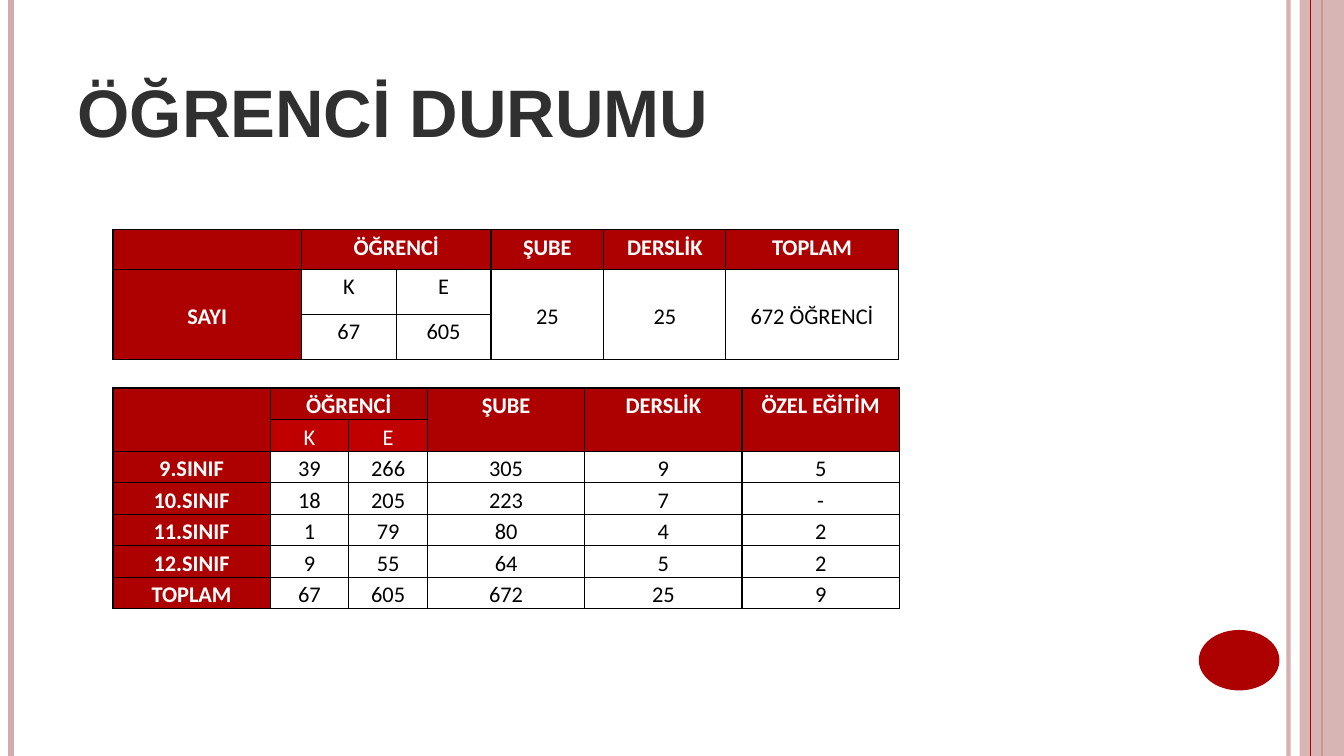
from lxml.etree import SubElement
from pptx import Presentation
from pptx.dml.color import RGBColor
from pptx.enum.shapes import MSO_CONNECTOR, MSO_SHAPE
from pptx.enum.text import MSO_ANCHOR, PP_ALIGN
from pptx.oxml.ns import qn
from pptx.util import Inches, Pt

COLORS = {"red": "AD0101", "bright": "C00000", "rose": "D3ABAB",
          "title": "303030", "black": "000000", "white": "FFFFFF"}
TITLE = "ÖĞRENCİ DURUMU"

# Spans are (first row, first column, last row, last column).
SUMMARY = {
    "at": (1.12, 2.28),
    "columns": [1.87, 0.94, 0.94, 1.12, 1.21, 1.71],
    "heights": [0.39, 0.45, 0.45],
    "rows": [["", "ÖĞRENCİ", "", "ŞUBE", "DERSLİK", "TOPLAM"],
             ["SAYI", "K", "E", "25", "25", "672 ÖĞRENCİ"],
             ["", "67", "605", "", "", ""]],
    "spans": [(0, 1, 0, 2)] + [(1, col, 2, col) for col in (0, 3, 4, 5)],
    "header_rows": 1,
    "subheads": [],
    "middle": [(1, col) for col in (0, 3, 4, 5)],
}
CLASSES = {
    "at": (1.12, 3.85),
    "columns": [1.56, 0.78, 0.78, 1.56, 1.56, 1.56],
    "heights": [0.31] * 7,
    "rows": [["", "ÖĞRENCİ", "", "ŞUBE", "DERSLİK", "ÖZEL EĞİTİM"],
             ["", "K", "E", "", "", ""],
             ["9.SINIF", "39", "266", "305", "9", "5"],
             ["10.SINIF", "18", "205", "223", "7", "-"],
             ["11.SINIF", "1", "79", "80", "4", "2"],
             ["12.SINIF", "9", "55", "64", "5", "2"],
             ["TOPLAM", "67", "605", "672", "25", "9"]],
    "spans": [(0, 1, 0, 2)] + [(0, col, 1, col) for col in (0, 3, 4, 5)],
    "header_rows": 2,
    "subheads": [(1, 1), (1, 2)],
    "middle": [],
}
# x, width in points, colour, opacity in percent
RULES = [(12.78, 3, "rose", 93), (0.11, 4.5, "rose", 100),
         (13.11, 1.5, "red", 100)]
THIN_RULE = (13, 0.75, "red", 100)
SLIDE_WIDTH, SLIDE_HEIGHT = 13.33, 7.5


def rgb(name):
    return RGBColor.from_string(COLORS[name])


def set_opacity(shape, percent):
    for color in shape._element.spPr.iter(qn("a:srgbClr")):
        SubElement(color, qn("a:alpha"), val=str(percent * 1000))


def add_rule(slide, x, width, color, opacity):
    """Draw a vertical line over the full slide height."""
    rule = slide.shapes.add_connector(
        MSO_CONNECTOR.STRAIGHT, Inches(x), 0, Inches(x), Inches(SLIDE_HEIGHT))
    rule.line.color.rgb = rgb(color)
    rule.line.width = Pt(width)
    if opacity < 100:
        set_opacity(rule, opacity)
    SubElement(rule._element.spPr, qn("a:effectLst"))


def add_plain_shape(slide, kind, box, color):
    shape = slide.shapes.add_shape(kind, *map(Inches, box))
    shape.shadow.inherit = False
    shape.fill.solid()
    shape.fill.fore_color.rgb = rgb(color)
    shape.line.fill.background()
    return shape


def add_borders(cell):
    properties = cell._tc.get_or_add_tcPr()
    for side in ("lnL", "lnR", "lnT", "lnB"):
        border = SubElement(properties, qn(f"a:{side}"), w=str(Pt(1)))
        fill = SubElement(border, qn("a:solidFill"))
        SubElement(fill, qn("a:srgbClr"), val=COLORS["black"])


def format_cell(cell, text, fill, ink, bold, anchor):
    add_borders(cell)
    cell.fill.solid()
    cell.fill.fore_color.rgb = rgb(fill)
    cell.margin_left = cell.margin_right = Inches(0.07)
    cell.margin_top = cell.margin_bottom = 0
    cell.vertical_anchor = anchor
    cell.text_frame.text = text
    paragraph = cell.text_frame.paragraphs[0]
    paragraph.alignment = PP_ALIGN.CENTER
    paragraph.line_spacing = 1.15
    for run in paragraph.runs:
        run.font.name = "Calibri"
        run.font.size = Pt(16)
        run.font.bold = bold
        run.font.color.rgb = rgb(ink)


def add_student_table(slide, content):
    columns, heights, rows = (content[key] for key in ("columns", "heights", "rows"))
    left, top = content["at"]
    table = slide.shapes.add_table(
        len(rows), len(columns), Inches(left), Inches(top),
        Inches(sum(columns)), Inches(sum(heights))).table
    table.first_row = table.horz_banding = False
    for column, width in zip(table.columns, columns):
        column.width = Inches(width)
    for row, height in zip(table.rows, heights):
        row.height = Inches(height)

    for r, texts in enumerate(rows):
        for c, text in enumerate(texts):
            heading = r < content["header_rows"] or c == 0
            subhead = (r, c) in content["subheads"]
            fill = "bright" if subhead else "red" if heading else "white"
            ink = "white" if heading else "black"
            middle = (r, c) in content["middle"]
            anchor = MSO_ANCHOR.MIDDLE if middle else MSO_ANCHOR.TOP
            format_cell(table.cell(r, c), text, fill, ink,
                        heading and not subhead, anchor)
    for r1, c1, r2, c2 in content["spans"]:
        table.cell(r1, c1).merge(table.cell(r2, c2))


def add_title(slide):
    title = slide.shapes.title
    title.left, title.top = Inches(0.67), Inches(0.3)
    title.width, title.height = Inches(10.89), Inches(1.25)
    frame = title.text_frame
    frame.text = TITLE
    frame.vertical_anchor = MSO_ANCHOR.BOTTOM
    paragraph = frame.paragraphs[0]
    paragraph.alignment = PP_ALIGN.LEFT
    font = paragraph.runs[0].font
    font.name, font.size, font.bold = "Arial", Pt(48), True
    font.color.rgb = rgb("title")


def main():
    presentation = Presentation()
    presentation.slide_width = Inches(SLIDE_WIDTH)
    presentation.slide_height = Inches(SLIDE_HEIGHT)
    slide = presentation.slides.add_slide(presentation.slide_layouts[5])

    for rule in RULES:
        add_rule(slide, *rule)
    band = add_plain_shape(slide, MSO_SHAPE.RECTANGLE,
                           (12.89, 0, 0.44, SLIDE_HEIGHT), "rose")
    set_opacity(band, 87)
    add_rule(slide, *THIN_RULE)
    add_plain_shape(slide, MSO_SHAPE.OVAL, (11.89, 6.25, 0.8, 0.6), "red")

    add_title(slide)
    for content in (SUMMARY, CLASSES):
        add_student_table(slide, content)
    presentation.save("out.pptx")


if __name__ == "__main__":
    main()
